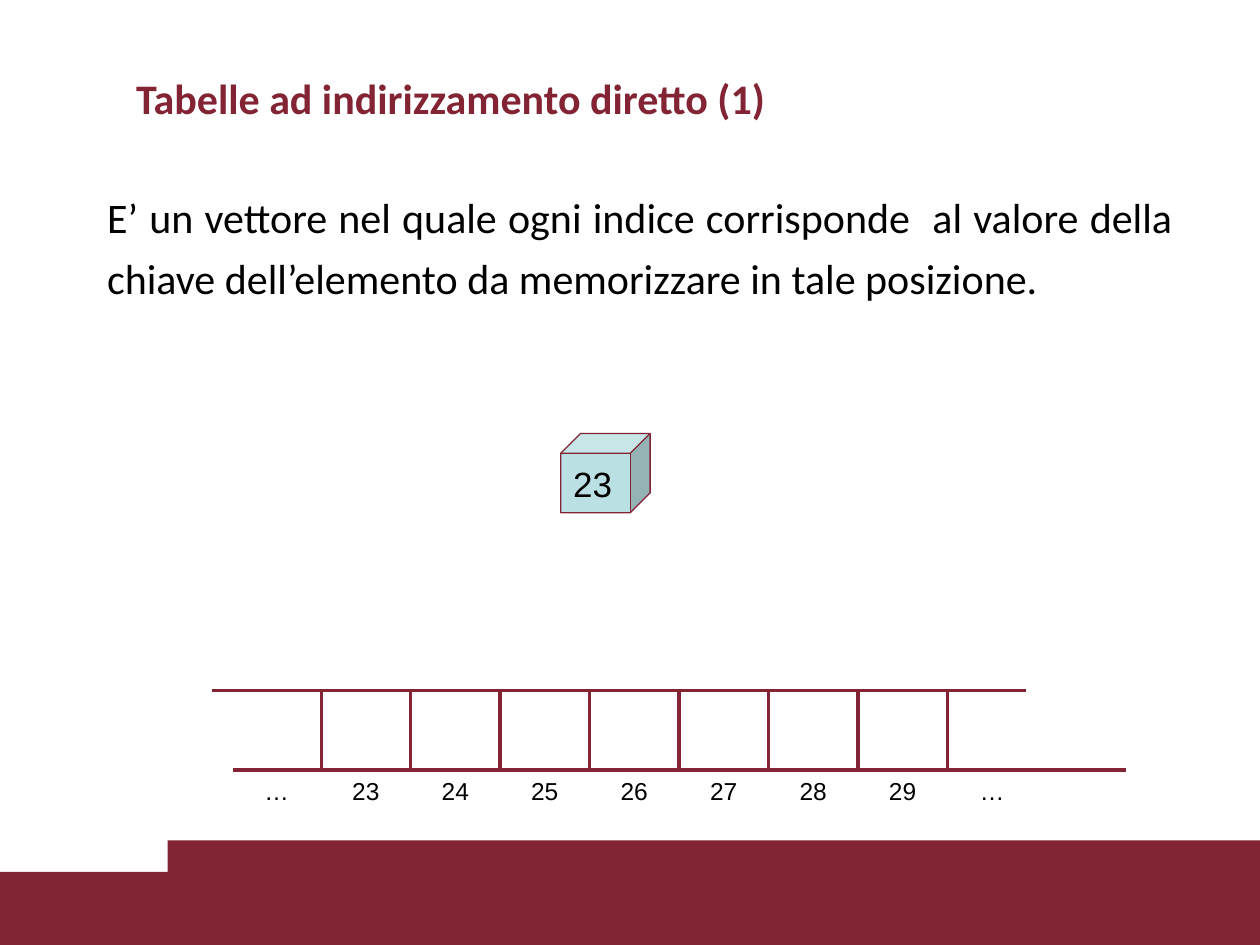
import pptx
import pptx.util
import pptx.dml.color
import pptx.enum.shapes
import pptx.enum.text
import pptx.oxml.ns
import lxml.etree
from pptx.util import Inches

COLORS = {"wine": "822433", "cube": "BBE0E3", "text": "000000"}
CELL_WIDTH, CELL_HEIGHT = 0.71, 0.63
ARRAY_LEFT, ARRAY_TOP = 2.55, 5.48
LABEL_LEFT, LABEL_INSET = 2, 0.1


def color(name):
    """Return the named colour."""
    return pptx.dml.color.RGBColor.from_string(COLORS[name])


def add_child(parent, tag, **attributes):
    """Append a DrawingML element to a parent."""
    return lxml.etree.SubElement(parent, pptx.oxml.ns.qn(tag), attributes)


def place(shape, left, top, width, height):
    """Move and size a shape, in inches."""
    shape.left, shape.top = Inches(left), Inches(top)
    shape.width, shape.height = Inches(width), Inches(height)


def write(shape, text, font, size, ink="text", bold=False, align="LEFT", anchor="MIDDLE"):
    """Set the text of a shape and return its paragraph."""
    frame = shape.text_frame
    frame.text = text
    frame.word_wrap = True
    frame.auto_size = pptx.enum.text.MSO_AUTO_SIZE.NONE
    frame.vertical_anchor = pptx.enum.text.MSO_ANCHOR[anchor]
    para = frame.paragraphs[0]
    para.alignment = pptx.enum.text.PP_ALIGN[align]
    para.font.name, para.font.size = font, pptx.util.Pt(size)
    para.font.bold, para.font.color.rgb = bold, color(ink)
    return para


def add_shape(page, kind, left, top, width, height, fill=None, line=None):
    """Add a preset shape with optional fill and line width."""
    shape = page.shapes.add_shape(
        pptx.enum.shapes.MSO_SHAPE[kind],
        Inches(left), Inches(top), Inches(width), Inches(height))
    shape.shadow.inherit = False
    if fill:
        shape.fill.solid()
        shape.fill.fore_color.rgb = color(fill)
    else:
        shape.fill.background()
    if line:
        shape.line.color.rgb = color("wine")
        shape.line.width = pptx.util.Pt(line)
    else:
        shape.line.fill.background()
    return shape


def add_rule(page, left, right, top):
    """Add a horizontal edge of the array."""
    rule = page.shapes.add_connector(
        pptx.enum.shapes.MSO_CONNECTOR.STRAIGHT,
        Inches(left), Inches(top), Inches(right), Inches(top))
    rule.line.color.rgb = color("wine")
    rule.line.width = pptx.util.Pt(2)
    add_child(rule._element.spPr, "a:effectLst")


def add_array(page):
    """Draw the open-ended array and its index labels."""
    add_rule(page, 1.68, 8.14, ARRAY_TOP)
    add_rule(page, 1.85, 8.94, ARRAY_TOP + CELL_HEIGHT)
    for index in range(0, 8, 2):
        add_shape(page, "RECTANGLE", ARRAY_LEFT + index * CELL_WIDTH, ARRAY_TOP,
                  CELL_WIDTH, CELL_HEIGHT, line=2)
    labels = ["…", *map(str, range(23, 30)), "…"]
    box = page.shapes.add_textbox(Inches(LABEL_LEFT), Inches(ARRAY_TOP + CELL_HEIGHT),
                                  Inches(6.38), Inches(0.34))
    para = write(box, "\t".join(labels), "Arial", 14, anchor="TOP")
    stops = add_child(para._p.get_or_add_pPr(), "a:tabLst")
    first = ARRAY_LEFT + CELL_WIDTH / 2 - LABEL_LEFT - LABEL_INSET
    for index in range(len(labels) - 1):
        add_child(stops, "a:tab", pos=str(Inches(first + index * CELL_WIDTH)), algn="ctr")
    properties = para._p.get_or_add_pPr()
    properties.insert(0, stops)


def add_body(body):
    """Fill the body placeholder with a justified, unbulleted paragraph."""
    place(body, 0.75, 1.39, 8.66, 1.44)
    para = write(body, "E’ un vettore nel quale ogni indice corrisponde  al valore della "
                 "chiave dell’elemento da memorizzare in tale posizione.",
                 "Calibri", 24, align="JUSTIFY", anchor="TOP")
    para.line_spacing = 1.2
    para.space_before = pptx.util.Pt(4.8)
    properties = para._p.get_or_add_pPr()
    properties.set("marL", "0")
    properties.set("indent", "0")
    bullet = add_child(properties, "a:buNone")
    properties.find(pptx.oxml.ns.qn("a:defRPr")).addprevious(bullet)


def main():
    """Build the slide and save it."""
    deck = pptx.Presentation()
    deck.slide_width, deck.slide_height = Inches(10), Inches(7.5)
    page = deck.slides.add_slide(deck.slide_layouts[1])
    title, body = page.placeholders
    add_shape(page, "RECTANGLE", 0, 6.92, 10, 0.58, fill="wine")
    add_shape(page, "RECTANGLE", 1.33, 6.67, 8.67, 0.83, fill="wine")
    place(title, 0.98, 0.5, 8.11, 0.55)
    write(title, "Tabelle ad indirizzamento diretto (1)", "Calibri", 24, "wine", bold=True)
    add_body(body)
    cube = add_shape(page, "CUBE", 4.45, 3.44, CELL_WIDTH, CELL_HEIGHT, fill="cube", line=0.75)
    write(cube, "23", "Arial", 20)
    add_array(page)
    deck.save("out.pptx")


if __name__ == "__main__":
    main()
